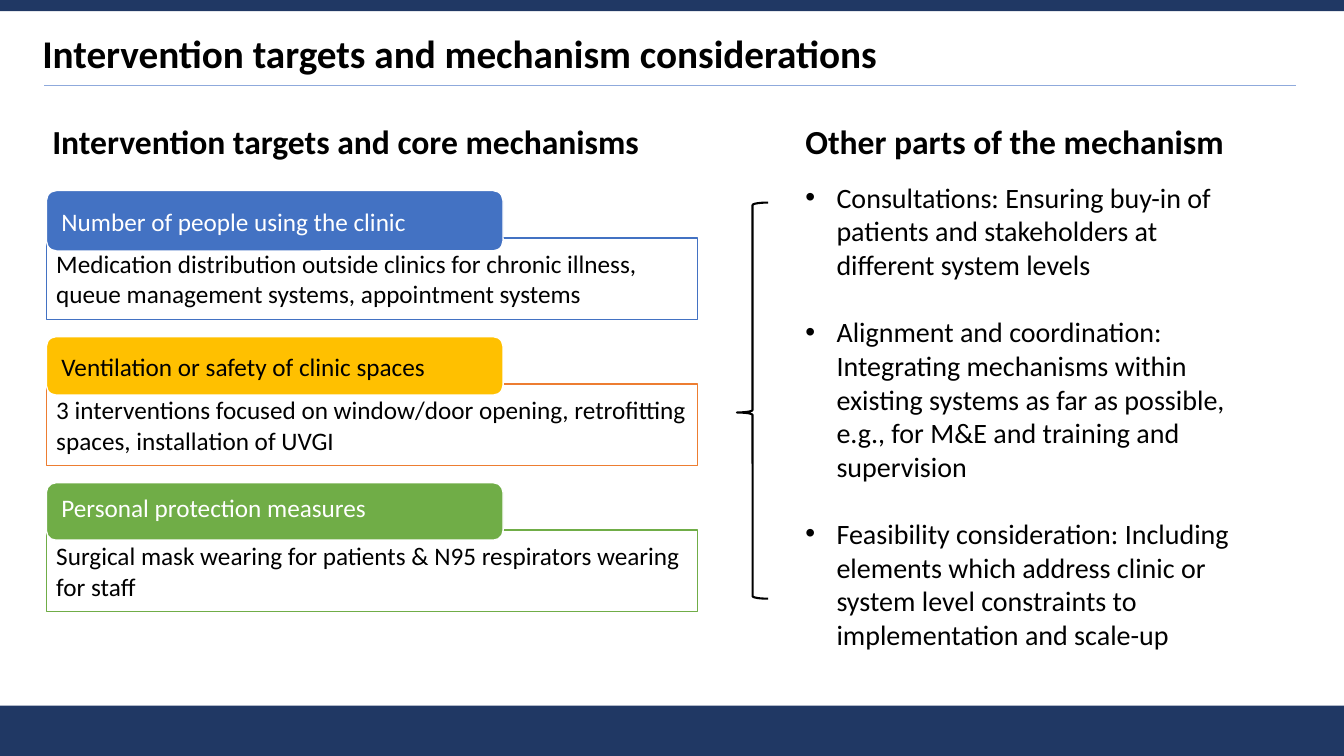
from dataclasses import dataclass

from lxml.etree import SubElement
from pptx import Presentation
from pptx.dml.color import RGBColor as RGB
from pptx.enum.shapes import MSO_CONNECTOR as LINE, MSO_SHAPE as SHAPE
from pptx.enum.text import MSO_ANCHOR as ANCHOR, PP_ALIGN as ALIGN
from pptx.oxml.ns import qn
from pptx.util import Inches, Pt


@dataclass(frozen=True)
class Theme:
    font: str = "Calibri"
    navy: str = "203864"
    rule: str = "8FAADC"
    ink: str = "000000"
    paper: str = "FFFFFF"
    blue: str = "4372C3"
    orange: str = "ED7D31"
    gold: str = "FFC000"
    green: str = "70AD47"
    title: int = 28
    heading: int = 24
    bullet: int = 20
    card: int = 18


T = Theme()
WIDTH, HEIGHT = Inches(13.33), Inches(7.5)

# All places and sizes are percentages of the slide's width and height.
CARD_LEFT, CARD_TOP, CARD_PITCH = 3.45, 25.2, 19.33
BODY_DROP, LABEL_DROP = 6.27, 0.67
RIGHT_LEFT, RIGHT_WIDTH = 59.18, 34.5
HEADING_TOP, HEADING_HEIGHT = 15.33, 6.67

# label, detail, tab fill, label colour, border, tab height, label height
CARDS = [
    ("Number of people using the clinic",
     "Medication distribution outside clinics for chronic illness, "
     "queue management systems, appointment systems",
     T.blue, T.paper, T.blue, 8, 7.47),
    ("Ventilation or safety of clinic spaces",
     "3 interventions focused on window/door opening, retrofitting spaces, "
     "installation of UVGI",
     T.gold, T.ink, T.orange, 7.73, 7.07),
    ("Personal protection measures",
     "Surgical mask wearing for patients & N95 respirators wearing for staff",
     T.green, T.paper, T.green, 7.6, 5.73),
]

CONSIDERATIONS = [
    "Consultations: Ensuring buy-in of patients and stakeholders at "
    "different system levels",
    "Alignment and coordination: Integrating mechanisms within existing "
    "systems as far as possible, e.g., for M&E and training and supervision",
    "Feasibility consideration: Including elements which address clinic or "
    "system level constraints to implementation and scale-up",
]


def share(x, y, w, h):
    return [int(v * full / 100)
            for v, full in zip((x, y, w, h), (WIDTH, HEIGHT) * 2)]


def assign(obj, **values):
    for name, value in values.items():
        setattr(obj, name, value)


def set_line(line, color, width):
    line.color.rgb = RGB.from_string(color)
    line.width = Pt(width)


def add_shape(s, kind, box, fill=None, line=None, width=1, opacity=100):
    sp = s.shapes.add_shape(kind, *share(*box))
    sp.shadow.inherit = False
    if fill:
        sp.fill.solid()
        sp.fill.fore_color.rgb = RGB.from_string(fill)
        if opacity < 100:
            color = sp.fill._xPr.find(qn("a:solidFill"))[0]
            SubElement(color, qn("a:alpha"), val=str(opacity * 1000))
    else:
        sp.fill.background()
    if line:
        set_line(sp.line, line, width)
    else:
        sp.line.fill.background()
    return sp


def add_bullet(p, indent=0.31):
    pPr = p._p.get_or_add_pPr()
    pPr.set("marL", str(Inches(indent)))
    pPr.set("indent", str(-Inches(indent)))
    color = SubElement(pPr, qn("a:buClr"))
    SubElement(color, qn("a:srgbClr"), val=T.ink)
    SubElement(pPr, qn("a:buFont"), typeface="Arial")
    SubElement(pPr, qn("a:buChar"), char="•")


def write(sp, texts, size, color=T.ink, bold=False, anchor=ANCHOR.TOP,
          insets=(0.1, 0.05, 0.1, 0.05), spacing=None, bullets=False, gap=0):
    """Fill a shape with one paragraph per text; insets run left, top, right, bottom."""
    tf = sp.text_frame
    assign(tf, word_wrap=True, vertical_anchor=anchor)
    for side, inset in zip(("left", "top", "right", "bottom"), insets):
        setattr(tf, f"margin_{side}", Inches(inset))
    for i, text in enumerate(texts):
        p = tf.paragraphs[0] if i == 0 else tf.add_paragraph()
        assign(p, alignment=ALIGN.LEFT, line_spacing=spacing)
        if i and gap:
            p.space_before = Pt(gap)
        if bullets:
            add_bullet(p)
        r = p.add_run()
        r.text = text
        assign(r.font, name=T.font, size=Pt(size), bold=bold)
        r.font.color.rgb = RGB.from_string(color)


def add_text(s, box, texts, size, **style):
    write(s.shapes.add_textbox(*share(*box)), texts, size, **style)


def add_rule(s, x1, x2, y):
    left, top, right, bottom = share(x1, y, x2, y)
    c = s.shapes.add_connector(LINE.STRAIGHT, left, top, right, bottom)
    set_line(c.line, T.rule, 1)
    SubElement(c._element.spPr, qn("a:effectLst"))


def add_card(s, row, label, detail, fill, color, border, tab_h, label_h):
    top = CARD_TOP + row * CARD_PITCH
    body = add_shape(s, SHAPE.RECTANGLE,
                     (CARD_LEFT, top + BODY_DROP, 48.45, 10.8),
                     T.paper, border, opacity=90)
    write(body, [detail], T.card, anchor=ANCHOR.MIDDLE, insets=(0.1,) * 4)
    add_shape(s, SHAPE.ROUNDED_RECTANGLE,
              (CARD_LEFT, top, 33.98, tab_h), fill, T.paper)
    add_text(s, (CARD_LEFT, top + LABEL_DROP, 33.45, label_h), [label], T.card,
             color=color, anchor=ANCHOR.MIDDLE, insets=(0.15, 0, 0.15, 0),
             spacing=0.9)


def add_heading(s, left, width, text):
    add_text(s, (left, HEADING_TOP, width, HEADING_HEIGHT), [text],
             T.heading, bold=True)


def main():
    prs = Presentation()
    assign(prs, slide_width=WIDTH, slide_height=HEIGHT)
    s = prs.slides.add_slide(prs.slide_layouts[6])

    add_shape(s, SHAPE.RECTANGLE, (0, 93.33, 100, 6.67), T.navy)
    add_rule(s, 3.3, 96.45, 11.33)
    add_shape(s, SHAPE.RECTANGLE, (0, 0, 100, 1.47), T.navy)
    add_text(s, (3.15, 3.2, 93.15, 7.6),
             ["Intervention targets and mechanism considerations"], T.title,
             bold=True, anchor=ANCHOR.MIDDLE, insets=(0, 0.05, 0.1, 0.05))

    for row, card in enumerate(CARDS):
        add_card(s, row, *card)
    add_heading(s, 3.15, 59.25, "Intervention targets and core mechanisms")

    brace = add_shape(s, SHAPE.LEFT_BRACE, (54.83, 26.8, 2.33, 52.4),
                      line=T.ink, width=1.5)
    brace.adjustments[0], brace.adjustments[1] = 0.08, 0.53

    add_text(s, (RIGHT_LEFT, 23.2, RIGHT_WIDTH, 68.67), CONSIDERATIONS,
             T.bullet, bullets=True, gap=24)
    add_heading(s, RIGHT_LEFT, RIGHT_WIDTH, "Other parts of the mechanism")

    prs.save("out.pptx")


if __name__ == "__main__":
    main()
